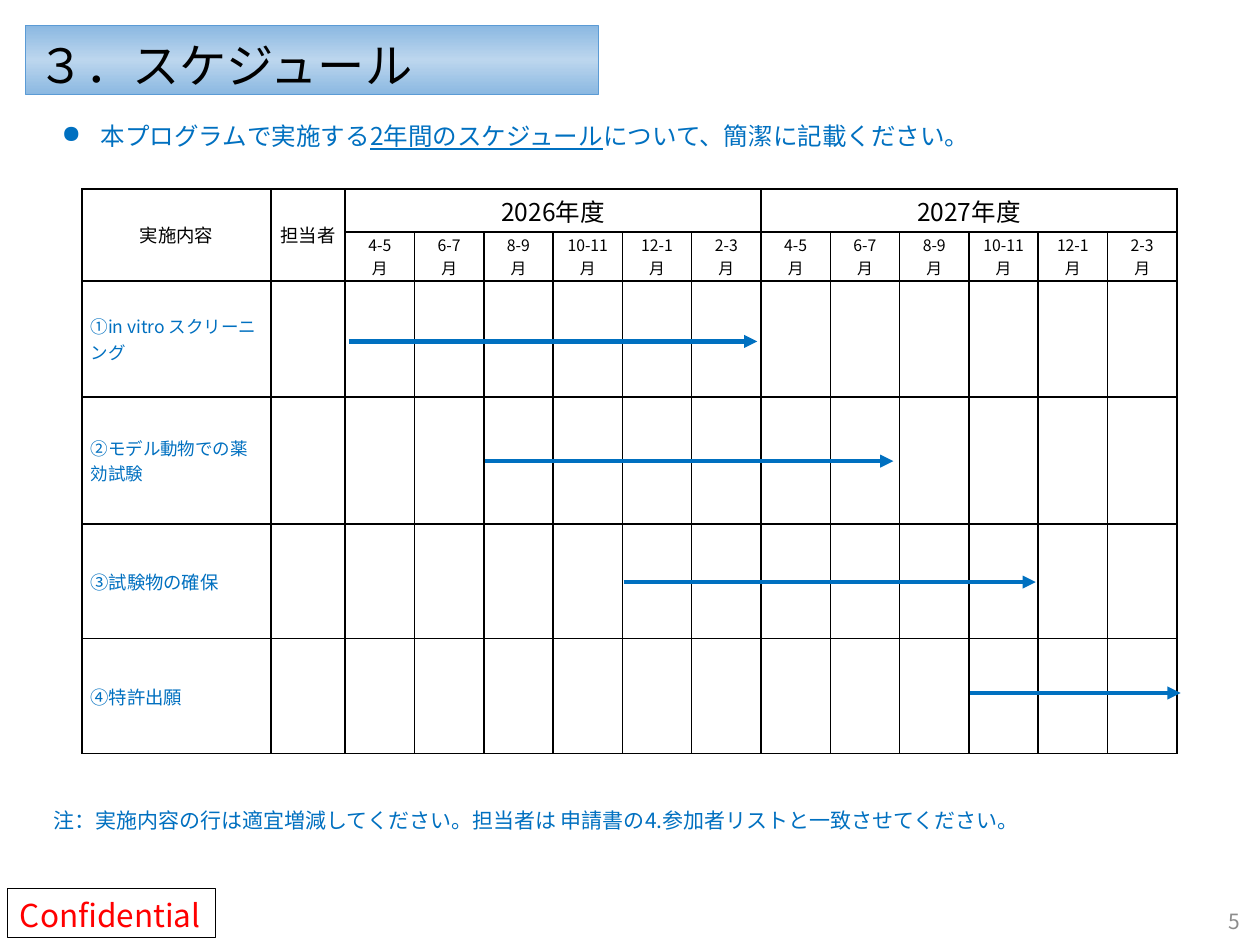
from lxml import etree
from pptx import Presentation
from pptx.dml.color import RGBColor
from pptx.enum.shapes import MSO_CONNECTOR, MSO_SHAPE
from pptx.enum.text import MSO_ANCHOR, PP_ALIGN
from pptx.oxml.ns import qn
from pptx.util import Inches, Pt

LEFT, CENTER, RIGHT, JUSTIFY = PP_ALIGN.LEFT, PP_ALIGN.CENTER, PP_ALIGN.RIGHT, PP_ALIGN.JUSTIFY
MIDDLE, TOP = MSO_ANCHOR.MIDDLE, MSO_ANCHOR.TOP
FONT = "Noto Sans CJK JP"
BLACK, BLUE, RED, GRAY = "000000", "0070C0", "FF0000", "8C8C8C"

TITLE = "３．スケジュール"
TITLE_GRADIENT = [(0, "8BB8E1"), (0.5, "BCD6EE"), (1, "8BB8E1")]
GUIDANCE = [
    ("本プログラムで実施する", False),
    ("2年間のスケジュール", True),
    ("について、簡潔に記載ください。", False),
]
NOTE = "注：実施内容の行は適宜増減してください。担当者は 申請書の4.参加者リストと一致させてください。"
HEADINGS = ["実施内容", "担当者"]
YEARS = ["2026年度", "2027年度"]
PERIODS = ["4-5", "6-7", "8-9", "10-11", "12-1", "2-3"]
TASKS = [
    ("①in vitro スクリーニング", 10, LEFT, (2.77, 6.01, 2.71)),
    ("②モデル動物での薬効試験", 10, LEFT, (3.85, 7.09, 3.66)),
    ("③試験物の確保", 10.5, JUSTIFY, (4.95, 8.22, 4.62)),
    ("④特許出願", 10.5, LEFT, (7.7, 9.37, 5.5)),
]
COLUMN_WIDTHS = [1.5, 0.59] + [0.55] * len(PERIODS) * len(YEARS)
ROW_HEIGHTS = [0.34, 0.39, 0.92, 1.01, 0.91, 0.91]


def rgb(color):
    """Turn a hex string into a colour."""
    return RGBColor.from_string(color)


def format_text(frame, size, color, align=LEFT):
    """Format every paragraph and run of a text frame."""
    for paragraph in frame.paragraphs:
        paragraph.alignment = align
        for run in paragraph.runs:
            run.font.size = Pt(size)
            run.font.name = FONT
            run.font.color.rgb = rgb(color)
            east_asian = etree.SubElement(run.font._element, qn("a:ea"))
            east_asian.set("typeface", FONT)


def set_margins(target, left, top, right, bottom):
    """Set the inner margins of a cell or text frame."""
    target.margin_left, target.margin_top = Inches(left), Inches(top)
    target.margin_right, target.margin_bottom = Inches(right), Inches(bottom)


def place(shape, left, top, width, height):
    """Move and size a shape."""
    shape.left, shape.top = Inches(left), Inches(top)
    shape.width, shape.height = Inches(width), Inches(height)


def add_text(slide, box, text, size, color, align=LEFT, anchor=TOP):
    """Add a wrapping text box."""
    frame = slide.shapes.add_textbox(*map(Inches, box)).text_frame
    frame.word_wrap = True
    frame.vertical_anchor = anchor
    frame.text = text
    format_text(frame, size, color, align)


def add_title(slide):
    """Fill and format the title placeholder."""
    title = slide.shapes.title
    place(title, 0.2, 0.2, 4.55, 0.55)
    title.fill.gradient()
    title.fill.gradient_angle = 90
    stops = title._element.spPr.find(qn("a:gradFill")).find(qn("a:gsLst"))
    for stop in list(stops):
        stops.remove(stop)
    for position, color in TITLE_GRADIENT:
        stop = etree.SubElement(stops, qn("a:gs"), pos=str(int(position * 100000)))
        etree.SubElement(stop, qn("a:srgbClr"), val=color)
    title.line.color.rgb = rgb("5B9BD5")
    title.line.width = Pt(0.5)
    frame = title.text_frame
    frame.text = TITLE
    frame.word_wrap = False
    frame.vertical_anchor = MIDDLE
    set_margins(frame, 0.1, 0.12, 0.1, 0.04)
    format_text(frame, 27, BLACK)


def add_guidance(slide):
    """Add the bulleted guidance with its underlined part."""
    frame = slide.shapes.add_textbox(*map(Inches, (0.39, 0.91, 9.43, 0.34))).text_frame
    frame.word_wrap = True
    paragraph = frame.paragraphs[0]
    for text, underlined in GUIDANCE:
        run = paragraph.add_run()
        run.text = text
        run.font.underline = underlined
    format_text(frame, 14, BLUE)
    properties = paragraph._p.get_or_add_pPr()
    properties.set("marL", str(Inches(0.31)))
    properties.set("indent", str(-Inches(0.31)))
    etree.SubElement(properties, qn("a:buChar"), char="●")


def add_confidential_mark(slide):
    """Add the framed confidentiality mark."""
    mark = slide.shapes.add_shape(MSO_SHAPE.RECTANGLE, *map(Inches, (0.06, 7.05, 1.65, 0.39)))
    mark.shadow.inherit = False
    mark.fill.background()
    mark.line.color.rgb = rgb(BLACK)
    mark.line.width = Pt(0.75)
    frame = mark.text_frame
    frame.text = "Confidential"
    frame.word_wrap = False
    frame.vertical_anchor = MIDDLE
    set_margins(frame, 0.1, 0.08, 0.1, 0.04)
    format_text(frame, 18, RED)


def style_cell(cell):
    """Clear the fill of a cell and draw its borders."""
    cell.vertical_anchor = MIDDLE
    set_margins(cell, 0.07, 0, 0.07, 0)
    properties = cell._tc.get_or_add_tcPr()
    for side in ("a:lnL", "a:lnR", "a:lnT", "a:lnB"):
        border = etree.SubElement(properties, qn(side), w=str(Pt(1)))
        fill = etree.SubElement(border, qn("a:solidFill"))
        etree.SubElement(fill, qn("a:srgbClr"), val=BLACK)
    cell.fill.background()


def add_schedule(slide):
    """Add the schedule table."""
    table = slide.shapes.add_table(
        len(ROW_HEIGHTS), len(COLUMN_WIDTHS), *map(Inches, (0.65, 1.5, 8.7, 4.48))
    ).table
    table.first_row = table.horz_banding = False
    for column, width in zip(table.columns, COLUMN_WIDTHS):
        column.width = Inches(width)
    for row, height in zip(table.rows, ROW_HEIGHTS):
        row.height = Inches(height)
    for cell in table.iter_cells():
        style_cell(cell)

    def write(row, column, text, size, color=BLACK, align=CENTER):
        """Write one table cell."""
        frame = table.cell(row, column).text_frame
        frame.text = text
        format_text(frame, size, color, align)

    for column, heading in enumerate(HEADINGS):
        table.cell(0, column).merge(table.cell(1, column))
        write(0, column, heading, 10.5)
    for index, year in enumerate(YEARS):
        first = len(HEADINGS) + index * len(PERIODS)
        table.cell(0, first).merge(table.cell(0, first + len(PERIODS) - 1))
        write(0, first, year, 14)
        for column, period in enumerate(PERIODS, first):
            write(1, column, f"{period}\n月", 9)
    for row, (task, size, align, _) in enumerate(TASKS, 2):
        write(row, 0, task, size, BLUE, align)


def add_arrow(slide, start, end, y):
    """Add a horizontal arrow for the duration of a task."""
    arrow = slide.shapes.add_connector(MSO_CONNECTOR.STRAIGHT, *map(Inches, (start, y, end, y)))
    arrow.line.color.rgb = rgb(BLUE)
    arrow.line.width = Pt(2.5)
    etree.SubElement(arrow.line._get_or_add_ln(), qn("a:tailEnd"), type="triangle")
    etree.SubElement(arrow._element.spPr, qn("a:effectLst"))


def main():
    """Build and save the schedule slide."""
    deck = Presentation()
    deck.slide_width, deck.slide_height = Inches(10), Inches(7.5)
    slide = deck.slides.add_slide(deck.slide_layouts[5])
    add_confidential_mark(slide)
    add_guidance(slide)
    add_text(slide, (0.33, 6.36, 9.34, 0.3), NOTE, 12, BLUE)
    add_text(slide, (9.47, 7.17, 0.47, 0.28), "5", 12, GRAY, RIGHT, MIDDLE)
    add_title(slide)
    add_schedule(slide)
    for _, _, _, duration in TASKS:
        add_arrow(slide, *duration)
    deck.save("out.pptx")


if __name__ == "__main__":
    main()
